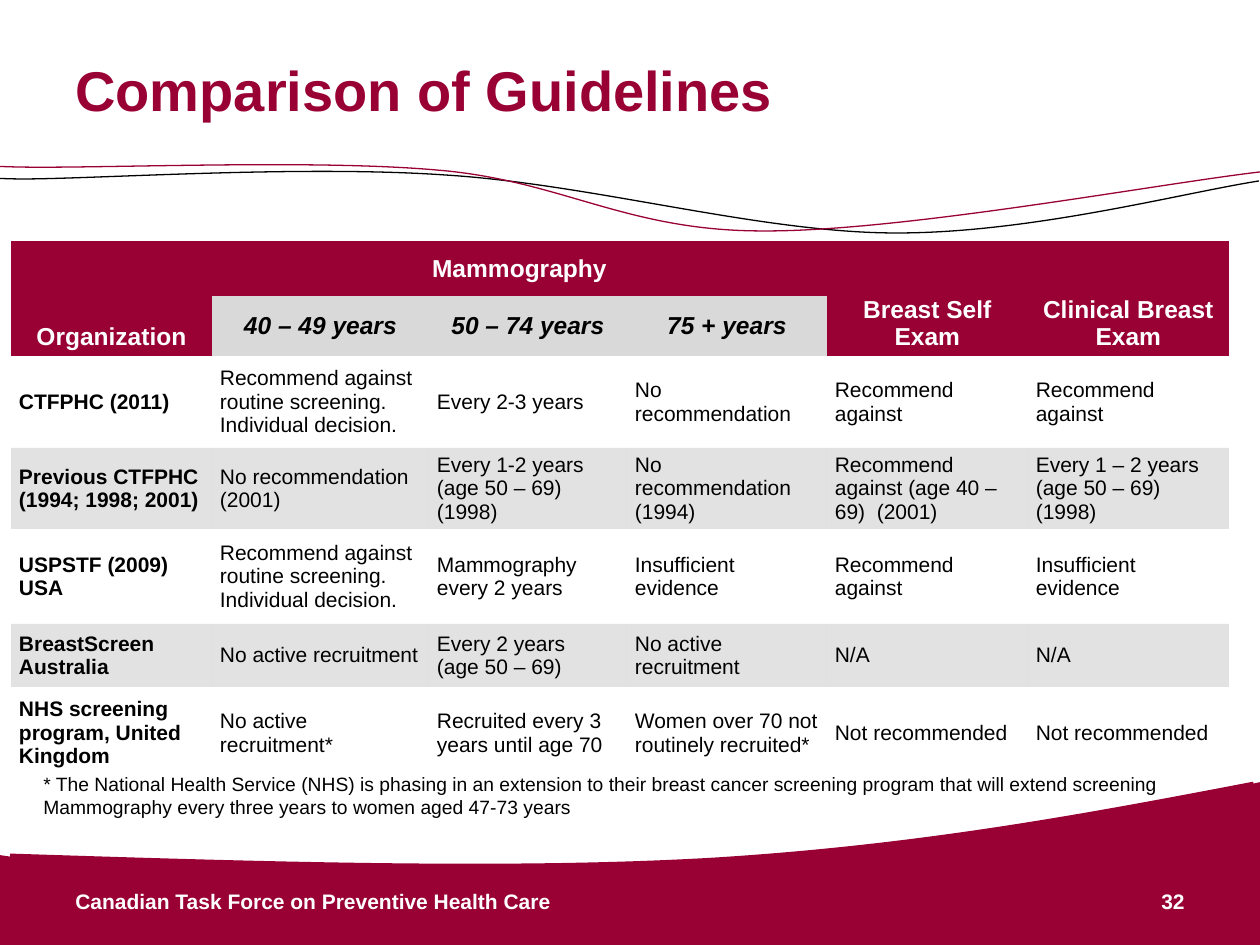
import pptx
import pptx.dml.color
import pptx.enum.text
import pptx.oxml.ns
import pptx.util
from lxml import etree

RGBColor = pptx.dml.color.RGBColor
ANCHOR = pptx.enum.text.MSO_ANCHOR
ALIGN = pptx.enum.text.PP_ALIGN
qn = pptx.oxml.ns.qn
PX = 914400 / 126

CRIMSON = RGBColor(0x99, 0x00, 0x33)
BLACK = RGBColor(0x00, 0x00, 0x00)
WHITE = RGBColor(0xFF, 0xFF, 0xFF)
GRAY = RGBColor(0xD9, 0xD9, 0xD9)
NO_STYLE = "{2D5ABB26-0587-4C30-8999-92F81FD0307C}"


def write(frame, text, color, align=ALIGN.LEFT, **font_format):
    """Fill a text frame, one paragraph per line of text."""
    frame.word_wrap = True
    frame.text = text
    for paragraph in frame.paragraphs:
        paragraph.alignment = align
        font = paragraph.runs[0].font
        font.name = "Arial"
        font.color.rgb = color
        for name, value in font_format.items():
            setattr(font, name, value)


def draw_outline(shapes, points, line_color, line_width, fill_color=None, curves=()):
    """Draw px points as a freeform; curves lists where each Bezier triple starts."""
    corners = [(round(x * PX), round(y * PX)) for x, y in points]
    builder = shapes.build_freeform(*corners[0])
    builder.add_line_segments(corners[1:], close=fill_color is not None)
    shape = builder.convert_to_shape()
    lines = list(shape._element.iter(qn("a:lnTo")))
    for first in curves:
        curve = etree.Element(qn("a:cubicBezTo"))
        lines[first - 1].addprevious(curve)
        for line in lines[first - 1:first + 2]:
            curve.append(line[0])
            line.getparent().remove(line)
    shape.shadow.inherit = False
    shape.line.color.rgb = line_color
    shape.line.width = pptx.util.Pt(line_width)
    if fill_color is None:
        shape.fill.background()
    else:
        shape.fill.solid()
        shape.fill.fore_color.rgb = fill_color


presentation = pptx.Presentation()
presentation.slide_width = round(1260 * PX)
presentation.slide_height = round(945 * PX)
slide = presentation.slides.add_slide(presentation.slide_layouts[6])

# Waves: a start point, then two controls and an end for each Bezier segment
WAVES = [
    ([(-11, 169), (-5, 171), (-54, 178), (21, 179), (98, 179), (300, 165), (445, 175),
      (591, 184), (757, 232), (892, 233), (1028, 234), (1182, 193), (1259, 181)],
     BLACK, 0.75),
    ([(-35, 157), (-28, 159), (-63, 165), (15, 167), (95, 169), (311, 159), (436, 170),
      (561, 180), (625, 231), (762, 231), (900, 232), (1157, 184), (1260, 172)],
     CRIMSON, 0.75),
    ([(10, 858), (258, 866), (508, 874), (714, 862), (922, 849), (1087, 818),
      (1254, 786)], CRIMSON, 5),
]
for points, color, width in WAVES:
    draw_outline(slide.shapes, points, color, width, curves=range(1, len(points), 3))

FOOTER_BAND = [
    (1, 944), (0, 857), (35, 862), (86, 862), (147, 864), (224, 866), (333, 868),
    (413, 869), (571, 869), (625, 866), (735, 862), (810, 854), (966, 838),
    (1056, 824), (1150, 805), (1173, 801), (1196, 793), (1220, 793), (1260, 784),
    (1260, 950)]
draw_outline(slide.shapes, FOOTER_BAND, CRIMSON, 2, CRIMSON, curves=[15])

# Guideline table; the second row grows to fit the two-line headers
COLUMN_WIDTHS = [201, 217, 198, 200, 201, 201]
ROW_HEIGHTS = [55, 29, 92, 81, 95, 63, 92]
ROWS = [
    ["Organization", "Mammography", "", "", "Breast Self Exam", "Clinical Breast Exam"],
    ["", "40 – 49 years", "50 – 74 years", "75 + years", "", ""],
    ["CTFPHC (2011)", "Recommend against routine screening. Individual decision.",
     "Every 2-3 years", "No recommendation", "Recommend against", "Recommend against"],
    ["Previous CTFPHC (1994; 1998; 2001)", "No recommendation (2001)",
     "Every 1-2 years (age 50 – 69) (1998)", "No recommendation (1994)",
     "Recommend against (age 40 – 69)  (2001)",
     "Every 1 – 2 years\n(age 50 – 69) (1998)"],
    ["USPSTF (2009)\nUSA", "Recommend against routine screening. Individual decision.",
     "Mammography every 2 years", "Insufficient evidence", "Recommend against",
     "Insufficient evidence"],
    ["BreastScreen Australia", "No active recruitment", "Every 2 years\n(age 50 – 69)",
     "No active recruitment", "N/A", "N/A"],
    ["NHS screening program, United Kingdom", "No active recruitment*",
     "Recruited every 3 years until age 70", "Women over 70 not routinely recruited*",
     "Not recommended", "Not recommended"],
]
table = slide.shapes.add_table(
    len(ROWS), len(COLUMN_WIDTHS), round(11 * PX), round(241 * PX),
    round(sum(COLUMN_WIDTHS) * PX), round(sum(ROW_HEIGHTS) * PX)).table
table.first_row = False
table.horz_banding = False
table._tbl.tblPr.find(qn("a:tableStyleId")).text = NO_STYLE
for column, width in zip(table.columns, COLUMN_WIDTHS):
    column.width = round(width * PX)
for row, height in zip(table.rows, ROW_HEIGHTS):
    row.height = round(height * PX)

table.cell(0, 1).merge(table.cell(0, 3))
for column_index in (0, 4, 5):
    table.cell(0, column_index).merge(table.cell(1, column_index))

for row_index, texts in enumerate(ROWS):
    for column_index, text in enumerate(texts):
        cell = table.cell(row_index, column_index)
        header = row_index < 2
        age_header = row_index == 1 and 1 <= column_index <= 3
        tall_header = header and column_index in (0, 4, 5)
        shaded = row_index in (3, 5)
        cell_format = {
            "margin_left": round(8 * PX),
            "margin_right": round(8 * PX),
            "margin_top": 0,
            "margin_bottom": round(5 * PX) if tall_header else 0,
            "vertical_anchor": ANCHOR.BOTTOM if tall_header else ANCHOR.MIDDLE,
        }
        for name, value in cell_format.items():
            setattr(cell, name, value)
        cell.fill.solid()
        if age_header or shaded:
            cell.fill.fore_color.rgb = GRAY
        else:
            cell.fill.fore_color.rgb = CRIMSON if header else WHITE
        if shaded:
            color_node = cell._tc.tcPr.find(".//" + qn("a:srgbClr"))
            etree.SubElement(color_node, qn("a:alpha"), val="75000")
        if text:
            write(cell.text_frame, text, WHITE if header and not age_header else BLACK,
                  ALIGN.CENTER if header else ALIGN.LEFT,
                  size=pptx.util.Pt(14 if header else 12),
                  bold=header or column_index == 0, italic=age_header)
        else:
            cell.text_frame.paragraphs[0].font.size = pptx.util.Pt(14)

TEXTS = [
    ((63, 10, 1134, 158), "Comparison of Guidelines", CRIMSON, ALIGN.LEFT,
     ANCHOR.MIDDLE, 32, True),
    ((63, 876, 766, 50), "Canadian Task Force on Preventive Health Care", WHITE,
     ALIGN.LEFT, ANCHOR.MIDDLE, 12, True),
    ((903, 876, 294, 50), "32", WHITE, ALIGN.RIGHT, ANCHOR.MIDDLE, 12, True),
    ((31, 766, 1196, 97),
     "* The National Health Service (NHS) is phasing in an extension to their breast "
     "cancer screening program that will extend screening Mammography every three "
     "years to women aged 47-73 years", BLACK, ALIGN.LEFT, ANCHOR.TOP, 11, False),
]
for box, text, color, align, anchor, size, bold in TEXTS:
    frame = slide.shapes.add_textbox(*(round(v * PX) for v in box)).text_frame
    frame.vertical_anchor = anchor
    write(frame, text, color, align, size=pptx.util.Pt(size), bold=bold)

presentation.save("out.pptx")
